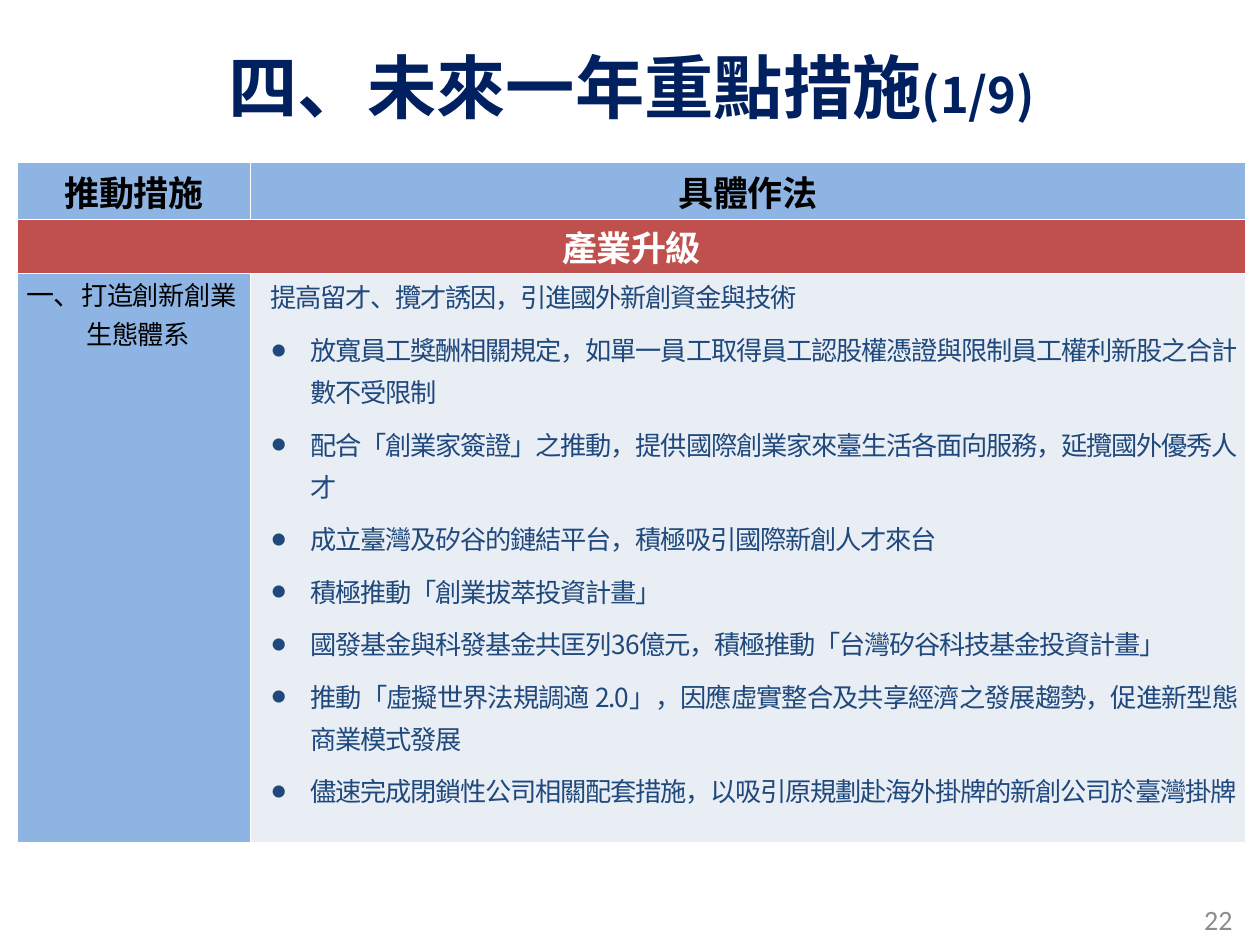
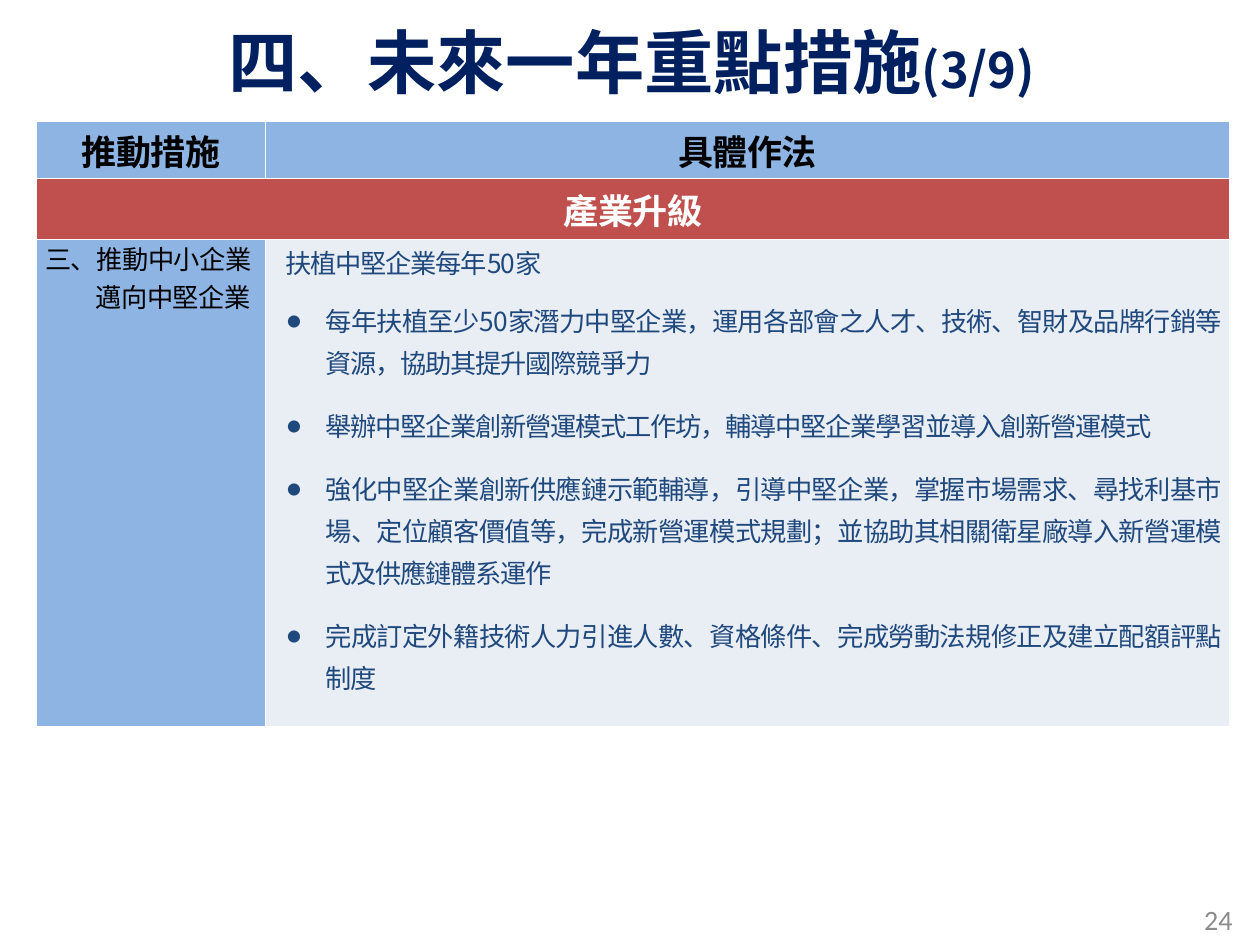
"""Build two slides of policy measures, each a titled table with a page number."""
from dataclasses import dataclass
from typing import Any

from lxml import etree
from pptx import Presentation, util as u
from pptx.dml.color import RGBColor
from pptx.enum import text
from pptx.oxml import ns

CJK, LATIN = "Noto Sans CJK SC", "Calibri"
NAVY, BLUE, GRAY = "002060", "1F497D", "8C8C8C"
BLACK, WHITE = "000000", "FFFFFF"
SKY, BRICK, PALE = "8EB4E3", "C0504D", "E9EDF4"
LEFT, CENTER, RIGHT, JUSTIFY = (
    text.PP_ALIGN.LEFT, text.PP_ALIGN.CENTER, text.PP_ALIGN.RIGHT, text.PP_ALIGN.JUSTIFY)
MIDDLE, TOP = text.MSO_ANCHOR.MIDDLE, text.MSO_ANCHOR.TOP
TITLE = "四、未來一年重點措施"
HEADERS = ("推動措施", "具體作法")
SECTION = "產業升級"


@dataclass(frozen=True)
class Style:
    size: float
    color: str
    bold: bool = False
    font: str = CJK
    spacing: float = 0


@dataclass(frozen=True)
class Measure:
    counter: str
    page: str
    title_top: float
    left: float
    top: float
    cols: tuple[float, float]
    rows: tuple[float, float, float]
    number: str
    number_size: float
    label: str
    hang: float
    goal: str
    gap: float
    actions: tuple[str, ...]


HEAD = Style(20, BLACK, True, spacing=-0.3)
BAND = Style(20, WHITE, True, spacing=-0.3)
BODY = Style(15, BLUE, spacing=-0.7)

MEASURES = (
    Measure(
        "(1/9)", "22", 23.8, 10, 92.9, (133.2, 568.8), (32.4, 31, 325.4),
        "一、", 16, "打造創新創業生態體系", 34.5,
        "提高留才、攬才誘因，引進國外新創資金與技術", 3,
        (
            "放寬員工獎酬相關規定，如單一員工取得員工認股權憑證與限制員工權利新股之合計數不受限制",
            "配合「創業家簽證」之推動，提供國際創業家來臺生活各面向服務，延攬國外優秀人才",
            "成立臺灣及矽谷的鏈結平台，積極吸引國際新創人才來台",
            "積極推動「創業拔萃投資計畫」",
            "國發基金與科發基金共匡列36億元，積極推動「台灣矽谷科技基金投資計畫」",
            "推動「虛擬世界法規調適 2.0」，因應虛實整合及共享經濟之發展趨勢，促進新型態商業模式發展",
            "儘速完成閉鎖性公司相關配套措施，以吸引原規劃赴海外掛牌的新創公司於臺灣掛牌",
        )),
    Measure(
        "(3/9)", "24", 9.4, 20.9, 69.1, (131, 550.8), (33.1, 34.6, 278.6),
        "三、", 15, "推動中小企業邁向中堅企業", 28.8,
        "扶植中堅企業每年50家", 6,
        (
            "每年扶植至少50家潛力中堅企業，運用各部會之人才、技術、智財及品牌行銷等資源，協助其提升國際競爭力",
            "舉辦中堅企業創新營運模式工作坊，輔導中堅企業學習並導入創新營運模式",
            "強化中堅企業創新供應鏈示範輔導，引導中堅企業，掌握市場需求、尋找利基市場、定位顧客價值等，"
            "完成新營運模式規劃；並協助其相關衛星廠導入新營運模式及供應鏈體系運作",
            "完成訂定外籍技術人力引進人數、資格條件、完成勞動法規修正及建立配額評點制度",
        )),
)


def rgb(value: str) -> RGBColor:
    return RGBColor.from_string(value)


def apply(target: Any, values: dict[str, Any]) -> None:
    for name, value in values.items():
        setattr(target, name, value)


def add_run(p: Any, content: str, style: Style) -> None:
    r = p.add_run()
    r.text = content
    apply(r.font, {"size": u.Pt(style.size), "bold": style.bold, "name": style.font})
    r.font.color.rgb = rgb(style.color)
    rPr = r._r.get_or_add_rPr()
    etree.SubElement(rPr, ns.qn("a:ea")).set("typeface", style.font)
    if style.spacing:
        rPr.set("spc", str(round(style.spacing * 100)))


def format_paragraph(p: Any, values: dict[str, Any], margin: float = 0,
                     indent: float = 0, bullet: str = "") -> None:
    apply(p, values)
    pPr = p._p.get_or_add_pPr()
    pPr.set("marL", str(u.Pt(margin)))
    pPr.set("indent", str(u.Pt(indent)))
    if bullet:
        etree.SubElement(pPr, ns.qn("a:buFont")).set("typeface", LATIN)
        etree.SubElement(pPr, ns.qn("a:buChar")).set("char", bullet)


def format_cell(cell: Any, fill: str, anchor: Any) -> None:
    apply(cell, {"margin_left": u.Pt(5), "margin_right": u.Pt(5), "margin_top": 0,
                 "margin_bottom": 0, "vertical_anchor": anchor})
    tcPr = cell._tc.get_or_add_tcPr()
    for side in ("lnL", "lnR", "lnT", "lnB"):
        ln = etree.SubElement(tcPr, ns.qn(f"a:{side}"), w=str(u.Pt(0.75)))
        solid = etree.SubElement(ln, ns.qn("a:solidFill"))
        etree.SubElement(solid, ns.qn("a:srgbClr")).set("val", WHITE)
    cell.fill.solid()
    cell.fill.fore_color.rgb = rgb(fill)


def add_heading(cell: Any, content: str, style: Style) -> None:
    p = cell.text_frame.paragraphs[0]
    format_paragraph(p, {"alignment": CENTER})
    add_run(p, content, style)


def add_title(s: Any, m: Measure) -> None:
    sp = s.shapes.title
    apply(sp, {"left": 0, "top": u.Pt(m.title_top), "width": u.Pt(722), "height": u.Pt(50.4)})
    tf = sp.text_frame
    apply(tf, {"margin_left": 0, "margin_right": 0, "vertical_anchor": MIDDLE,
               "auto_size": text.MSO_AUTO_SIZE.NONE, "word_wrap": True})
    p = tf.paragraphs[0]
    p.alignment = CENTER
    add_run(p, TITLE, Style(39.6, NAVY, True))
    add_run(p, m.counter, Style(27.9, NAVY, True))


def add_page_number(s: Any, page: str) -> None:
    tf = s.shapes.add_textbox(u.Pt(543.6), u.Pt(511.2), u.Pt(167.8), u.Pt(28.8)).text_frame
    apply(tf, {"word_wrap": True, "vertical_anchor": MIDDLE})
    p = tf.paragraphs[0]
    p.alignment = RIGHT
    add_run(p, page, Style(16, GRAY, font=LATIN))


def add_measure_table(s: Any, m: Measure) -> None:
    table = s.shapes.add_table(3, 2, u.Pt(m.left), u.Pt(m.top),
                               u.Pt(sum(m.cols)), u.Pt(sum(m.rows))).table
    apply(table, {"first_row": False, "horz_banding": False})
    for column, width in zip(table.columns, m.cols):
        column.width = u.Pt(width)
    for row, height in zip(table.rows, m.rows):
        row.height = u.Pt(height)
    fills = ((SKY, SKY), (BRICK, BRICK), (SKY, PALE))
    for i, row_fills in enumerate(fills):
        for j, fill in enumerate(row_fills):
            format_cell(table.cell(i, j), fill, TOP if i == 2 else MIDDLE)
    for j, header in enumerate(HEADERS):
        add_heading(table.cell(0, j), header, HEAD)
    table.cell(1, 0).merge(table.cell(1, 1))
    add_heading(table.cell(1, 0), SECTION, BAND)

    p = table.cell(2, 0).text_frame.paragraphs[0]
    format_paragraph(p, {"alignment": LEFT, "space_before": u.Pt(3)}, m.hang, -m.hang)
    add_run(p, m.number, Style(m.number_size, BLACK, spacing=-0.3))
    add_run(p, m.label, Style(15, BLACK, spacing=-0.3))

    tf = table.cell(2, 1).text_frame
    body = {"alignment": JUSTIFY, "line_spacing": u.Pt(24)}
    p = tf.paragraphs[0]
    format_paragraph(p, body | {"space_before": u.Pt(3), "space_after": u.Pt(3)}, 6.5)
    add_run(p, m.goal, BODY)
    for action in m.actions:
        p = tf.add_paragraph()
        gaps = {"space_before": u.Pt(m.gap), "space_after": u.Pt(m.gap)}
        format_paragraph(p, body | gaps, 29.2, -22.5, "●")
        add_run(p, action, BODY)


def main() -> None:
    prs = Presentation()
    apply(prs, {"slide_width": u.Pt(720), "slide_height": u.Pt(540)})
    for m in MEASURES:
        s = prs.slides.add_slide(prs.slide_layouts[5])
        add_title(s, m)
        add_measure_table(s, m)
        add_page_number(s, m.page)
    prs.save("out.pptx")


if __name__ == "__main__":
    main()
